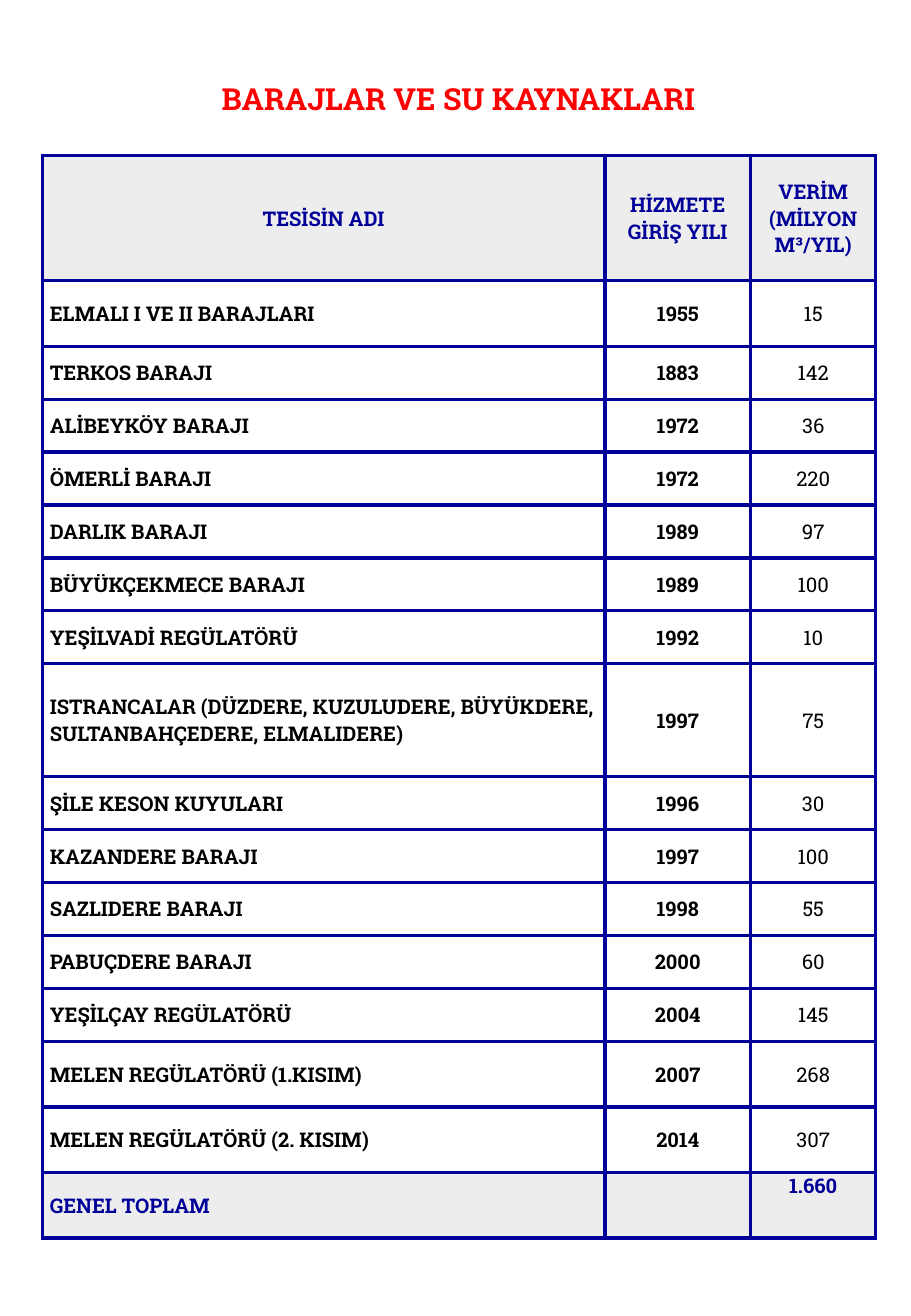
from dataclasses import dataclass

from lxml.etree import SubElement
from pptx import Presentation
from pptx.dml.color import RGBColor
from pptx.enum.text import MSO_ANCHOR, MSO_AUTO_SIZE, PP_ALIGN
from pptx.oxml.ns import qn
from pptx.util import Inches, Pt


@dataclass(frozen=True)
class Theme:
    font: str = "Roboto Slab"
    title_size: int = 18
    cell_size: int = 12
    red: str = "FF0000"
    navy: str = "000099"
    black: str = "000000"
    gray: str = "EDEDED"
    white: str = "FFFFFF"
    border: float = 2.25


theme = Theme()


def add_text(p, text, size, color, bold=True, align=PP_ALIGN.CENTER):
    p.alignment = align
    r = p.add_run()
    r.text = text
    r.font.name = theme.font
    r.font.size = Pt(size)
    r.font.bold = bold
    r.font.color.rgb = RGBColor.from_string(color)


def style_cell(cell, fill):
    cell.margin_left = cell.margin_right = Inches(0.06)
    cell.margin_top = cell.margin_bottom = 0
    cell.vertical_anchor = MSO_ANCHOR.MIDDLE
    tcPr = cell._tc.get_or_add_tcPr()
    for side in ("a:lnL", "a:lnR", "a:lnT", "a:lnB"):
        ln = SubElement(tcPr, qn(side), w=str(Pt(theme.border)))
        solid = SubElement(ln, qn("a:solidFill"))
        SubElement(solid, qn("a:srgbClr"), val=theme.navy)
    cell.fill.solid()
    cell.fill.fore_color.rgb = RGBColor.from_string(fill)


header = ("TESİSİN ADI", "HİZMETE\nGİRİŞ YILI", "VERİM\n(MİLYON M³/YIL)")
facilities = [
    ("ELMALI I VE II BARAJLARI", "1955", "15"),
    ("TERKOS BARAJI", "1883", "142"),
    ("ALİBEYKÖY BARAJI", "1972", "36"),
    ("ÖMERLİ BARAJI", "1972", "220"),
    ("DARLIK BARAJI", "1989", "97"),
    ("BÜYÜKÇEKMECE BARAJI", "1989", "100"),
    ("YEŞİLVADİ REGÜLATÖRÜ", "1992", "10"),
    ("ISTRANCALAR (DÜZDERE, KUZULUDERE, BÜYÜKDERE, SULTANBAHÇEDERE, ELMALIDERE)", "1997", "75"),
    ("ŞİLE KESON KUYULARI", "1996", "30"),
    ("KAZANDERE BARAJI", "1997", "100"),
    ("SAZLIDERE BARAJI", "1998", "55"),
    ("PABUÇDERE BARAJI", "2000", "60"),
    ("YEŞİLÇAY REGÜLATÖRÜ", "2004", "145"),
    ("MELEN REGÜLATÖRÜ (1.KISIM)", "2007", "268"),
    ("MELEN REGÜLATÖRÜ (2. KISIM)", "2014", "307"),
]
total = ("GENEL TOPLAM", "", "1.660")
rows = [header, *facilities, total]
last = len(rows) - 1

prs = Presentation()
prs.slide_width, prs.slide_height = Inches(7.5), Inches(10.83)
s = prs.slides.add_slide(prs.slide_layouts[5])

title = s.shapes.title
title.left, title.top = Inches(0.5), Inches(0.64)
title.width, title.height = Inches(6.55), Inches(0.64)
tf = title.text_frame
tf.word_wrap = True
tf.auto_size = MSO_AUTO_SIZE.NONE
tf.vertical_anchor = MSO_ANCHOR.TOP
tf.paragraphs[0].line_spacing = 0.9
add_text(tf.paragraphs[0], "BARAJLAR VE SU KAYNAKLARI", theme.title_size, theme.red)

height = 8.91
table = s.shapes.add_table(
    len(rows), len(header), Inches(0.35), Inches(1.28), Inches(6.86), Inches(height)
).table
table.first_row = table.horz_banding = False
for column, width in zip(table.columns, (4.63, 1.2, 1.03)):
    column.width = Inches(width)

tall_rows = {0: 1.03, 1: 0.54, 8: 0.93, 14: 0.54, 15: 0.54, 16: 0.54}
plain_height = (height - sum(tall_rows.values())) / (len(rows) - len(tall_rows))

for i, values in enumerate(rows):
    table.rows[i].height = Inches(tall_rows.get(i, plain_height))
    accent = i in (0, last)
    for j, value in enumerate(values):
        cell = table.cell(i, j)
        style_cell(cell, theme.gray if accent else theme.white)
        if not value:
            continue
        tf = cell.text_frame
        for k, line in enumerate(value.split("\n")):
            p = tf.add_paragraph() if k else tf.paragraphs[0]
            add_text(
                p, line, theme.cell_size,
                theme.navy if accent else theme.black,
                bold=accent or j < 2,
                align=PP_ALIGN.LEFT if i and j == 0 else PP_ALIGN.CENTER,
            )

table.cell(last, 2).vertical_anchor = MSO_ANCHOR.TOP

prs.save("out.pptx")
